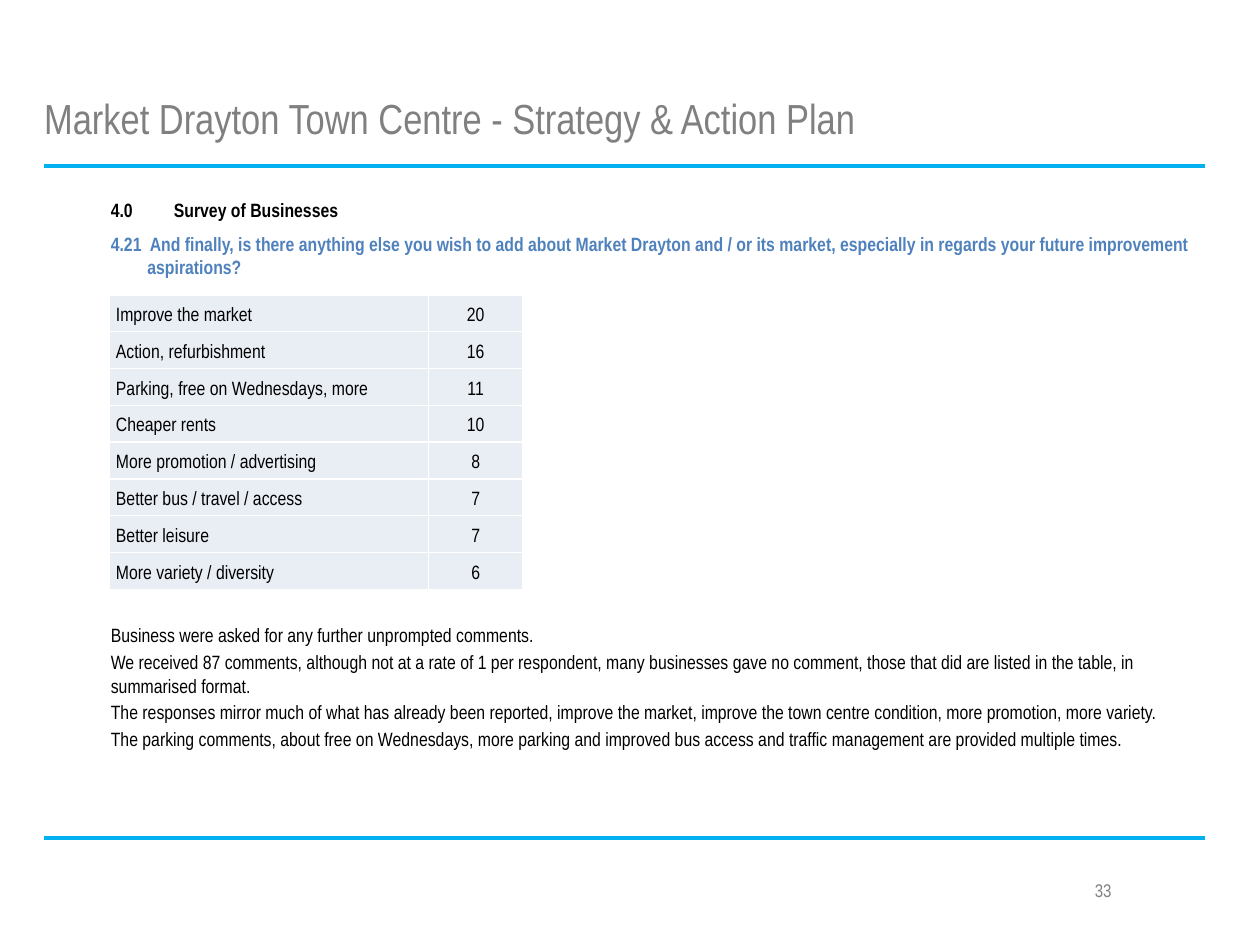
import dataclasses

import lxml.etree
import pptx
import pptx.dml.color
import pptx.enum.shapes
import pptx.enum.text
import pptx.oxml.ns
import pptx.util

Inches = pptx.util.Inches
Pt = pptx.util.Pt
Align = pptx.enum.text.PP_ALIGN
Anchor = pptx.enum.text.MSO_ANCHOR
qn = pptx.oxml.ns.qn


@dataclasses.dataclass(frozen=True)
class Theme:
    font: str = "Arial Narrow"
    title_size: float = 24
    text_size: float = 11
    number_size: float = 10.5
    grey: str = "808080"
    black: str = "000000"
    blue: str = "4F81BD"
    rule: str = "00B0F0"
    cell: str = "E9EDF4"
    border: str = "FFFFFF"


THEME = Theme()
WIDTH, HEIGHT = 10, 7.5
MARGIN = 0.35
CONTENT_LEFT = 0.88
CONTENT_WIDTH = 8.67
INDENT = 0.29
COLUMNS = (2.53, 0.75)
ROW_HEIGHT = 2.34 / 8

COMMENT_COUNTS = (
    ("Improve the market", 20),
    ("Action, refurbishment", 16),
    ("Parking, free on Wednesdays, more", 11),
    ("Cheaper rents", 10),
    ("More promotion / advertising", 8),
    ("Better bus / travel / access", 7),
    ("Better leisure", 7),
    ("More variety / diversity", 6),
)

QUESTION = (
    "4.21  And finally, is there anything else you wish to add about Market Drayton "
    "and / or its market, especially in regards your future improvement aspirations?"
)

FINDINGS = (
    "Business were asked for any further unprompted comments.",
    "We received 87 comments, although not at a rate of 1 per respondent, many businesses "
    "gave no comment, those that did are listed in the table, in summarised format.",
    "The responses mirror much of what has already been reported, improve the market, "
    "improve the town centre condition, more promotion, more variety.",
    "The parking comments, about free on Wednesdays, more parking and improved bus access "
    "and traffic management are provided multiple times.",
)


def colour(value):
    return pptx.dml.color.RGBColor.from_string(value)


def add_run(paragraph, text, size=THEME.text_size, value=THEME.black, bold=False):
    run = paragraph.add_run()
    run.text = text
    run.font.name = THEME.font
    run.font.size = Pt(size)
    run.font.bold = bold
    run.font.color.rgb = colour(value)


def set_insets(target, left, top, right, bottom):
    target.margin_left, target.margin_top = Inches(left), Inches(top)
    target.margin_right, target.margin_bottom = Inches(right), Inches(bottom)


def set_title(slide, text):
    title = slide.shapes.title
    title.left, title.top = Inches(MARGIN), Inches(0.31)
    title.width, title.height = Inches(9.15), Inches(1.25)
    frame = title.text_frame
    frame.auto_size = pptx.enum.text.MSO_AUTO_SIZE.NONE
    frame.vertical_anchor = Anchor.MIDDLE
    set_insets(frame, 0, 0.05, 0.1, 0.05)
    paragraph = frame.paragraphs[0]
    paragraph.alignment = Align.LEFT
    add_run(paragraph, text, THEME.title_size, THEME.grey)


def add_rule(slide, top):
    line = slide.shapes.add_connector(
        pptx.enum.shapes.MSO_CONNECTOR.STRAIGHT,
        Inches(MARGIN), Inches(top), Inches(9.56), Inches(top),
    )
    line.line.color.rgb = colour(THEME.rule)
    line.line.width = Pt(2.25)
    properties = line._element.find(qn("p:spPr"))
    lxml.etree.SubElement(properties, qn("a:effectLst"))


def add_text(slide, left, top, width, height, texts, gap=0, **style):
    box = slide.shapes.add_textbox(Inches(left), Inches(top), Inches(width), Inches(height))
    frame = box.text_frame
    frame.word_wrap = True
    set_insets(frame, 0, 0, 0, 0)
    for index, text in enumerate(texts):
        paragraph = frame.add_paragraph() if index else frame.paragraphs[0]
        if index:
            paragraph.space_before = Pt(gap)
        add_run(paragraph, text, **style)
    return frame


def set_indent(paragraph, indent, tab):
    properties = paragraph._p.get_or_add_pPr()
    properties.set("marL", str(Inches(indent)))
    properties.set("indent", str(-Inches(indent)))
    tabs = lxml.etree.SubElement(properties, qn("a:tabLst"))
    lxml.etree.SubElement(tabs, qn("a:tab"), pos=str(Inches(tab)), algn="l")


def add_borders(cell):
    properties = cell._tc.get_or_add_tcPr()
    for side in ("lnL", "lnR", "lnT", "lnB"):
        line = lxml.etree.SubElement(properties, qn("a:" + side), w=str(Pt(1)))
        fill = lxml.etree.SubElement(line, qn("a:solidFill"))
        lxml.etree.SubElement(fill, qn("a:srgbClr"), val=THEME.border)


def fill_cell(cell, text, alignment):
    add_borders(cell)
    cell.fill.solid()
    cell.fill.fore_color.rgb = colour(THEME.cell)
    cell.vertical_anchor = Anchor.BOTTOM
    set_insets(cell, 0.05, 0.05, 0.05, 0.05)
    paragraph = cell.text_frame.paragraphs[0]
    paragraph.alignment = alignment
    add_run(paragraph, text)


def add_count_table(slide, left, top, records):
    table = slide.shapes.add_table(
        len(records), len(COLUMNS), Inches(left), Inches(top),
        Inches(sum(COLUMNS)), Inches(ROW_HEIGHT * len(records)),
    ).table
    table.first_row = False
    table.horz_banding = False
    for column, width in zip(table.columns, COLUMNS):
        column.width = Inches(width)
    for row, (label, count) in enumerate(records):
        fill_cell(table.cell(row, 0), label, Align.LEFT)
        fill_cell(table.cell(row, 1), str(count), Align.CENTER)


def main():
    presentation = pptx.Presentation()
    presentation.slide_width, presentation.slide_height = Inches(WIDTH), Inches(HEIGHT)
    slide = presentation.slides.add_slide(presentation.slide_layouts[5])

    set_title(slide, "Market Drayton Town Centre - Strategy & Action Plan")
    for top in (1.32, 6.65):
        add_rule(slide, top)

    section = add_text(slide, CONTENT_LEFT, 1.57, 4.2, 0.29,
                       ["4.0\tSurvey of Businesses"], bold=True)
    set_indent(section.paragraphs[0], 0, 1)
    question = add_text(slide, CONTENT_LEFT, 1.84, CONTENT_WIDTH, 0.29,
                        [QUESTION], value=THEME.blue, bold=True)
    set_indent(question.paragraphs[0], INDENT, INDENT)

    add_count_table(slide, 0.87, 2.34, COMMENT_COUNTS)
    add_text(slide, CONTENT_LEFT, 4.95, CONTENT_WIDTH, 1.56, FINDINGS, gap=2.2)

    number = add_text(slide, 7.17, 6.93, 1.75, 0.5, ["33"],
                      size=THEME.number_size, value=THEME.grey)
    set_insets(number, 0.1, 0.05, 0.1, 0.05)
    number.paragraphs[0].alignment = Align.RIGHT

    presentation.save("out.pptx")


if __name__ == "__main__":
    main()
